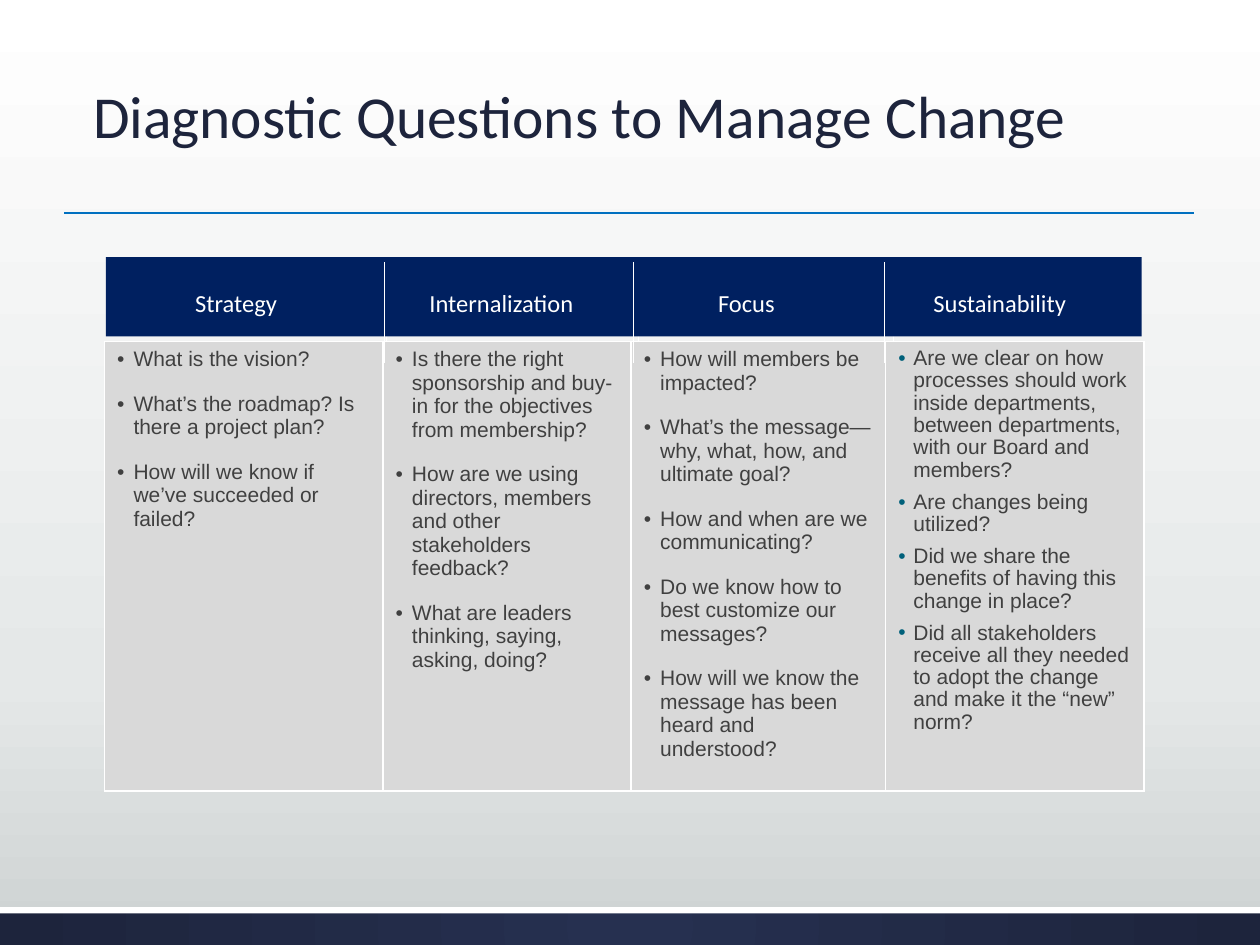
from dataclasses import dataclass

from lxml import etree
from pptx import Presentation
from pptx.dml.color import RGBColor
from pptx.enum.shapes import MSO_CONNECTOR, MSO_SHAPE
from pptx.enum.text import MSO_ANCHOR, MSO_AUTO_SIZE
from pptx.oxml import parse_xml
from pptx.oxml.ns import nsdecls, qn
from pptx.util import Inches, Pt

RECTANGLE = MSO_SHAPE.RECTANGLE
STRAIGHT = MSO_CONNECTOR.STRAIGHT
TOP, BOTTOM = MSO_ANCHOR.TOP, MSO_ANCHOR.BOTTOM
GROW = MSO_AUTO_SIZE.SHAPE_TO_FIT_TEXT
COLUMNS, ROWS = 100, 75


@dataclass(frozen=True)
class Theme:
    """Colours, fonts and type sizes of the slide."""
    ink: str = "1D243C"
    navy: str = "002060"
    rule: str = "0070C0"
    white: str = "FFFFFF"
    panel: str = "D9D9D9"
    body: str = "404040"
    accent: str = "00607A"
    backdrop: tuple = ((0, "FFFFFF"), (72, "E5E8E8"), (100, "CDD2D2"))
    footer: tuple = ((0, "263050"), (100, "1D243C"))
    heading_font: str = "Calibri"
    body_font: str = "Arial"
    title_size: int = 34
    label_size: int = 14
    body_size: int = 12


@dataclass(frozen=True)
class Box:
    """A region measured in grid columns and rows."""
    left: float
    top: float
    width: float
    height: float

    def inner(self, left, top, width, height):
        """Return a box offset from this one."""
        return Box(self.left + left, self.top + top, width, height)

    def emu(self):
        """Return the box as slide lengths."""
        return [grid(v) for v in (self.left, self.top, self.width, self.height)]


THEME = Theme()
COLUMN_WIDTHS = (22.1, 19.7, 20.2, 20.5)
LABELS = (("Strategy", 6.1, 9.5), ("Internalization", 24.7, 15.4),
          ("Focus", 47.6, 7.8), ("Sustainability", 64.7, 14.8))
LABEL_DIVIDERS = (22.1, 41.9, 61.8)
TABLE_DIVIDERS = (22.4, 42.4, 62.6)
LOOSE = {"after": 12, "indent": 0.13}
TIGHT = {"before": 5.5, "spacing": 0.95, "indent": 0.12, "bullet_color": THEME.accent}
QUESTIONS = (
    (LOOSE, ("What is the vision?",
             "What’s the roadmap? Is there a project plan?",
             "How will we know if we’ve succeeded or failed?")),
    (LOOSE, ("Is there the right sponsorship and buy-in for the objectives from membership?",
             "How are we using directors, members and other stakeholders feedback?",
             "What are leaders thinking, saying, asking, doing?")),
    (LOOSE, ("How will members be impacted?",
             "What’s the message—why, what, how, and ultimate goal?",
             "How and when are we communicating?",
             "Do we know how to best customize our messages?",
             "How will we know the message has been heard and understood?")),
    (TIGHT, ("Are we clear on how processes should work inside departments, "
             "between departments, with our Board and members?",
             "Are changes being utilized?",
             "Did we share the benefits of having this change in place?",
             "Did all stakeholders receive all they needed to adopt the change "
             "and make it the “new” norm?")),
)


def grid(cells):
    """Convert grid cells to a slide length."""
    return Inches(cells * 10 / COLUMNS)


def write(frame, lines, size, color, font, spacing=None, before=None, after=None,
          indent=None, bullet_color=None):
    """Fill a text frame with formatted paragraphs."""
    for position, line in enumerate(lines):
        paragraph = frame.paragraphs[0] if position == 0 else frame.add_paragraph()
        if indent:
            properties = paragraph._p.get_or_add_pPr()
            properties.set("marL", str(Inches(indent)))
            properties.set("indent", str(-Inches(indent)))
            if bullet_color:
                tint = etree.SubElement(properties, qn("a:buClr"))
                etree.SubElement(tint, qn("a:srgbClr"), val=bullet_color)
            etree.SubElement(properties, qn("a:buFont"), typeface=THEME.body_font)
            etree.SubElement(properties, qn("a:buChar"), char="•")
        if spacing:
            paragraph.line_spacing = spacing
        if before and position:
            paragraph.space_before = Pt(before)
        if after:
            paragraph.space_after = Pt(after)
        run = paragraph.add_run()
        run.text = line
        run.font.name, run.font.size = font, Pt(size)
        run.font.color.rgb = RGBColor.from_string(color)


def paint_gradient(owner, stops, direction):
    """Replace the first solid fill of an element with a gradient."""
    solid = next(owner.iter(qn("a:solidFill")))
    marks = "".join(f'<a:gs pos="{share * 1000}"><a:srgbClr val="{color}"/></a:gs>'
                    for share, color in stops)
    solid.getparent().replace(solid, parse_xml(
        f'<a:gradFill {nsdecls("a")} rotWithShape="1"><a:gsLst>{marks}</a:gsLst>'
        f'{direction}</a:gradFill>'))


def add_band(shapes, box, color):
    """Add a plain filled rectangle."""
    band = shapes.add_shape(RECTANGLE, *box.emu())
    band.shadow.inherit = False
    band.fill.solid()
    band.fill.fore_color.rgb = RGBColor.from_string(color)
    band.line.fill.background()
    return band


def add_rule(shapes, box, color, weight):
    """Add a straight line across a box from corner to corner."""
    left, top, width, height = box.emu()
    rule = shapes.add_connector(STRAIGHT, left, top, left + width, top + height)
    rule.line.color.rgb = RGBColor.from_string(color)
    rule.line.width = Pt(weight)
    etree.SubElement(rule._element.spPr, qn("a:effectLst"))


def add_dividers(shapes, box, offsets, top, height):
    """Add white upright lines at offsets from the left of a box."""
    for offset in offsets:
        add_rule(shapes, box.inner(offset, top, 0, height), THEME.white, 0.75)


def add_footer(slide, box):
    """Add the dark footer with its white upper edge."""
    bar = add_band(slide.shapes, box, THEME.ink)
    paint_gradient(bar._element, THEME.footer,
                   '<a:path path="circle"><a:fillToRect l="50000" t="50000" '
                   'r="50000" b="50000"/></a:path>')
    add_band(slide.shapes, box.inner(0, 0, box.width, 0.5), THEME.white)


def add_title(slide, box):
    """Add the slide title and the blue rule under it."""
    add_rule(slide.shapes, Box(5.1, 16.9, 89.7, 0), THEME.rule, 1.5)
    frame = slide.shapes.add_textbox(*box.emu()).text_frame
    frame.word_wrap, frame.vertical_anchor = True, BOTTOM
    write(frame, ["Diagnostic Questions to Manage Change"], THEME.title_size,
          THEME.ink, THEME.heading_font, spacing=0.9)


def add_questions(slide, box):
    """Add the one-row table of questions."""
    add_dividers(slide.shapes, box, TABLE_DIVIDERS, -1.7, 11.3)
    table = slide.shapes.add_table(1, len(QUESTIONS), *box.emu()).table
    table.first_row = table.horz_banding = False
    for column, width in zip(table.columns, COLUMN_WIDTHS):
        column.width = grid(width)
    for cell, (layout, questions) in zip(table.rows[0].cells, QUESTIONS):
        write(cell.text_frame, questions, THEME.body_size, THEME.body,
              THEME.body_font, **layout)
        for side in ("lnL", "lnR", "lnT", "lnB"):
            edge = etree.SubElement(cell._tc.get_or_add_tcPr(), qn(f"a:{side}"), w=str(Pt(1)))
            paint = etree.SubElement(edge, qn("a:solidFill"))
            etree.SubElement(paint, qn("a:srgbClr"), val=THEME.white)
        cell.fill.solid()
        cell.fill.fore_color.rgb = RGBColor.from_string(THEME.panel)


def add_header(slide, box):
    """Add the navy header with its column labels."""
    shapes = slide.shapes.add_group_shape().shapes
    add_band(shapes, box, THEME.navy)
    for label, left, width in LABELS:
        frame = shapes.add_textbox(*box.inner(left, 2, width, 2.4).emu()).text_frame
        frame.word_wrap, frame.auto_size, frame.vertical_anchor = False, GROW, TOP
        write(frame, [label], THEME.label_size, THEME.white, THEME.heading_font)
    add_dividers(shapes, box, LABEL_DIVIDERS, 0.4, 8)


def main():
    """Build the slide and save it."""
    deck = Presentation()
    deck.slide_width, deck.slide_height = grid(COLUMNS), grid(ROWS)
    slide = deck.slides.add_slide(deck.slide_layouts[6])
    slide.background.fill.solid()
    paint_gradient(slide.element, THEME.backdrop, '<a:lin ang="5400000" scaled="0"/>')
    add_footer(slide, Box(0, 72, COLUMNS, 3))
    add_title(slide, Box(6.4, 3, 88.6, 9.5))
    add_questions(slide, Box(8.3, 27.1, 82.5, 35.5))
    add_header(slide, Box(8.4, 20.4, 82.2, 6.3))
    deck.save("out.pptx")


if __name__ == "__main__":
    main()
